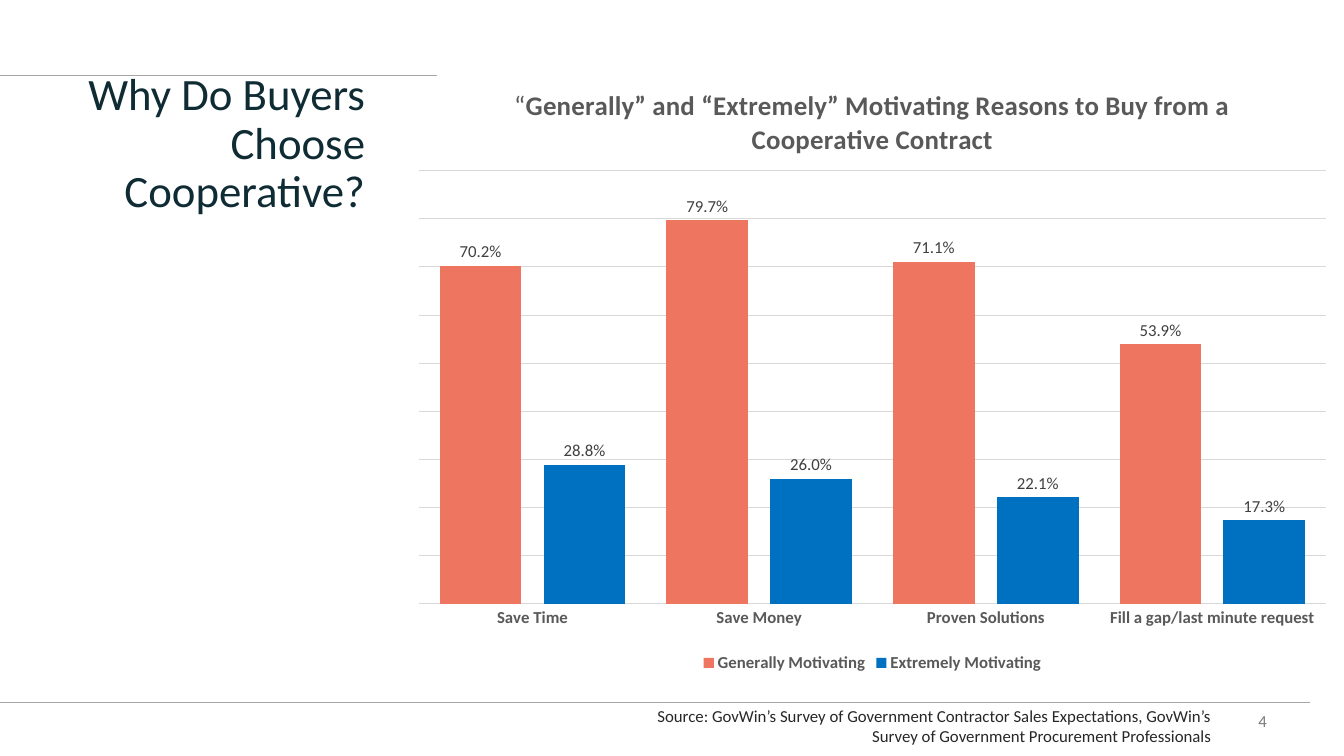
"""Build the slide on why buyers choose cooperative contracts."""
from dataclasses import dataclass

from lxml import etree
from pptx import Presentation
from pptx.chart.data import CategoryChartData
from pptx.dml.color import RGBColor
from pptx.enum.chart import XL_CHART_TYPE, XL_LABEL_POSITION, XL_LEGEND_POSITION, XL_TICK_MARK
from pptx.enum.shapes import MSO_CONNECTOR
from pptx.enum.text import MSO_ANCHOR, PP_ALIGN
from pptx.oxml import parse_xml
from pptx.oxml.ns import nsdecls, qn
from pptx.util import Pt

COLUMNS = XL_CHART_TYPE.COLUMN_CLUSTERED
BOTTOM = XL_LEGEND_POSITION.BOTTOM
OUTSIDE_END = XL_LABEL_POSITION.OUTSIDE_END
NO_TICKS = XL_TICK_MARK.NONE
STRAIGHT = MSO_CONNECTOR.STRAIGHT
TOP, MIDDLE = MSO_ANCHOR.TOP, MSO_ANCHOR.MIDDLE
RIGHT = PP_ALIGN.RIGHT


@dataclass(frozen=True)
class Theme:
    """Colours, font and type sizes of the slide."""
    font: str = "Calibri"
    heading: str = "0F2B33"
    source: str = "282727"
    page: str = "797979"
    rule: str = "A6A6A6"
    grid: str = "D9D9D9"
    chart_text: str = "595959"
    value_text: str = "404040"
    bars: tuple = ("EE7660", "0070C0")
    heading_size: float = 32
    chart_title_size: float = 19.2
    small_size: float = 12


class SlideBuilder:
    """Draws styled elements on one slide."""

    def __init__(self, slide, theme):
        self.slide = slide
        self.theme = theme

    def style(self, font, size, color, bold=False):
        """Apply the theme font with a size and colour."""
        font.name = self.theme.font
        font.size = Pt(size)
        font.bold = bold
        font.color.rgb = RGBColor.from_string(color)

    def hairline(self, line, color, width):
        """Set the colour and width of a line."""
        line.color.rgb = RGBColor.from_string(color)
        line.width = Pt(width)

    def rule(self, y, length):
        """Draw a horizontal rule from the left edge."""
        rule = self.slide.shapes.add_connector(STRAIGHT, 0, Pt(y), Pt(length), Pt(y))
        self.hairline(rule.line, self.theme.rule, 1)
        etree.SubElement(rule.element.spPr, qn("a:effectLst"))

    def text(self, box, lines, size, color, anchor=TOP, spacing=1.0):
        """Add right-aligned text with one paragraph per line."""
        frame = self.slide.shapes.add_textbox(*map(Pt, box)).text_frame
        frame.word_wrap = True
        frame.vertical_anchor = anchor
        for index, line in enumerate(lines):
            paragraph = frame.add_paragraph() if index else frame.paragraphs[0]
            paragraph.alignment = RIGHT
            paragraph.line_spacing = spacing
            run = paragraph.add_run()
            run.text = line
            self.style(run.font, size, color)

    def column_chart(self, box, title_runs, reasons, ratings, plot_area):
        """Add a clustered column chart of percentages."""
        theme = self.theme
        data = CategoryChartData(number_format="0.0%")
        data.categories = reasons
        for name, shares in ratings.items():
            data.add_series(name, shares)
        chart = self.slide.shapes.add_chart(COLUMNS, *map(Pt, box), data).chart
        self.style(chart.font, theme.small_size, theme.chart_text)

        chart.has_title = True
        heading = chart.chart_title.text_frame.paragraphs[0]
        for words, bold in title_runs:
            run = heading.add_run()
            run.text = words
            self.style(run.font, theme.chart_title_size, theme.chart_text, bold)
        chart.chart_title.include_in_layout = False

        chart.has_legend = True
        chart.legend.position = BOTTOM
        chart.legend.include_in_layout = False
        self.style(chart.legend.font, theme.small_size, theme.chart_text, True)

        reason_axis = chart.category_axis
        reason_axis.major_tick_mark = NO_TICKS
        self.style(reason_axis.tick_labels.font, theme.small_size, theme.chart_text, True)
        self.hairline(reason_axis.format.line, theme.grid, 0.75)

        share_axis = chart.value_axis
        share_axis.minimum_scale, share_axis.maximum_scale = 0, 0.9
        share_axis.major_unit = 0.1
        share_axis.has_major_gridlines = True
        self.hairline(share_axis.major_gridlines.format.line, theme.grid, 0.75)
        share_axis.visible = False

        plot = chart.plots[0]
        plot.gap_width, plot.overlap = 50, -27
        plot.vary_by_categories = False
        for series, color in zip(plot.series, theme.bars):
            series.format.fill.solid()
            series.format.fill.fore_color.rgb = RGBColor.from_string(color)
            labels = series.data_labels
            labels.show_value = True
            labels.position = OUTSIDE_END
            labels.number_format = "0.0%"
            labels.number_format_is_linked = False
            self.style(labels.font, theme.small_size, theme.value_text)
        self.place_plot(chart, plot_area)

    def place_plot(self, chart, plot_area):
        """Fix the inner plot area as fractions of the chart."""
        sides = "".join(f'<c:{side} val="{part}"/>' for side, part in zip("xywh", plot_area))
        layout = parse_xml(
            f'<c:layout {nsdecls("c")}><c:manualLayout><c:layoutTarget val="inner"/>'
            f'<c:xMode val="edge"/><c:yMode val="edge"/>{sides}</c:manualLayout></c:layout>')
        area = chart.element.find(".//" + qn("c:plotArea"))
        for automatic in area.findall(qn("c:layout")):
            area.remove(automatic)
        area.insert(0, layout)


def main():
    """Build and save the slide."""
    deck = Presentation()
    deck.slide_width, deck.slide_height = Pt(960), Pt(540)
    theme = Theme()
    page = SlideBuilder(deck.slides.add_slide(deck.slide_layouts[6]), theme)

    page.rule(54, 312)
    page.rule(502, 936)
    page.text((688, 504, 224, 22), ["4"], theme.small_size, theme.page, MIDDLE)
    page.text((24.5, 48, 243.5, 137), ["Why Do Buyers Choose Cooperative?"],
              theme.heading_size, theme.heading, spacing=0.9)
    page.text((61, 500.5, 811.5, 35),
              ["Source: GovWin’s Survey of Government Contractor Sales Expectations, GovWin’s",
               "Survey of Government Procurement Professionals"],
              theme.small_size, theme.source)
    page.column_chart(
        (286, 48, 674.5, 435.5),
        [("“", False),
         ("Generally” and “Extremely” Motivating Reasons to Buy from a Cooperative Contract", True)],
        ["Save Time", "Save Money", "Proven Solutions", "Fill a gap/last minute request"],
        {"Generally Motivating": (0.702, 0.797, 0.711, 0.539),
         "Extremely Motivating": (0.288, 0.26, 0.221, 0.173)},
        (0.02, 0.17, 0.96, 0.71))
    deck.save("out.pptx")


if __name__ == "__main__":
    main()
